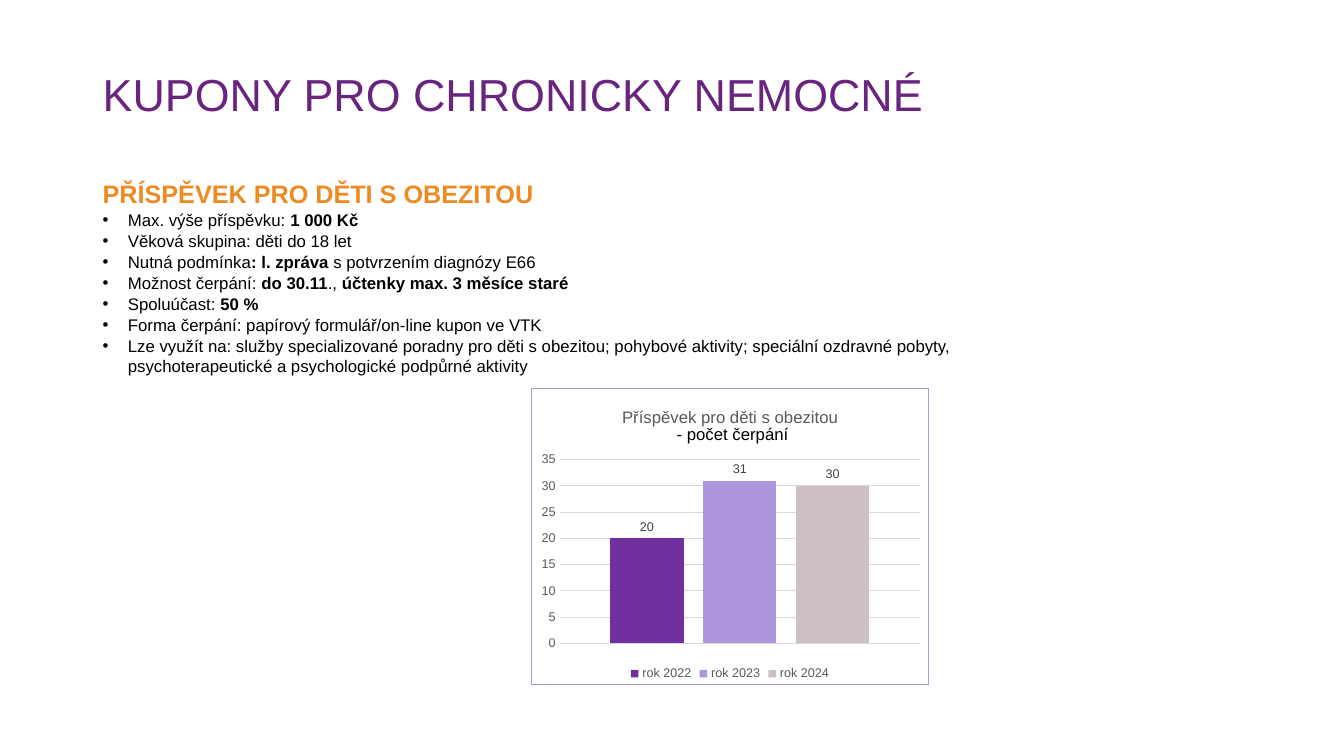
from dataclasses import dataclass
from typing import Optional

from lxml import etree
from pptx import Presentation
from pptx.chart.data import CategoryChartData
from pptx.dml.color import RGBColor as Rgb
from pptx.enum.chart import XL_CHART_TYPE as ChartType
from pptx.enum.chart import XL_LABEL_POSITION as LabelPos
from pptx.enum.chart import XL_LEGEND_POSITION as LegendPos
from pptx.enum.chart import XL_TICK_MARK as TickMark
from pptx.enum.text import MSO_ANCHOR as Anchor
from pptx.oxml import parse_xml
from pptx.oxml.ns import nsdecls, qn
from pptx.util import Inches, Pt


@dataclass(frozen=True)
class Theme:
    font: str = "Arial"
    purple: str = "692480"
    orange: str = "ED8B23"
    black: str = "000000"
    axis_grey: str = "595959"
    label_grey: str = "404040"
    grid: str = "D9D9D9"
    border: str = "AD96DC"
    white: str = "FFFFFF"
    title_size: int = 32
    heading_size: int = 18
    body_size: int = 12
    chart_size: int = 10
    small_size: int = 9


@dataclass(frozen=True)
class Run:
    text: str
    bold: bool = False


@dataclass(frozen=True)
class Year:
    name: str
    count: int
    color: str


THEME = Theme()

CONDITIONS = [
    [Run("Max. výše příspěvku: "), Run("1 000 Kč", True)],
    [Run("Věková skupina: děti do 18 let")],
    [Run("Nutná podmínka"), Run(": l. zpráva ", True), Run("s potvrzením diagnózy E66")],
    [Run("Možnost čerpání: "), Run("do 30.11", True), Run("., "),
     Run("účtenky max. 3 měsíce staré", True)],
    [Run("Spoluúčast: "), Run("50 %", True)],
    [Run("Forma čerpání: papírový formulář/on-line kupon ve VTK")],
    [Run("Lze využít na: služby specializované poradny pro děti s obezitou; "
         "pohybové aktivity; speciální ozdravné pobyty, "
         "psychoterapeutické a psychologické podpůrné aktivity")],
]

YEARS = [
    Year("rok 2022", 20, "7030A0"),
    Year("rok 2023", 31, "AD96DC"),
    Year("rok 2024", 30, "CDC1C4"),
]


def style_font(font, size: float, color: str, bold: bool = False) -> None:
    font.name = THEME.font
    font.size = Pt(size)
    font.bold = bold
    font.color.rgb = Rgb.from_string(color)


def add_frame(slide, left: float, top: float, width: float, height: float,
              anchor=Anchor.TOP):
    box = slide.shapes.add_textbox(Inches(left), Inches(top), Inches(width), Inches(height))
    frame = box.text_frame
    frame.word_wrap = True
    frame.vertical_anchor = anchor
    return frame


def write(paragraph, runs: list[Run], *, size: float, color: str,
          spacing: Optional[float] = None, bullet: bool = False) -> None:
    if spacing:
        paragraph.line_spacing = spacing
    if bullet:
        props = paragraph._p.get_or_add_pPr()
        props.set("marL", str(Inches(0.25)))
        props.set("indent", str(-Inches(0.25)))
        etree.SubElement(props, qn("a:buFont")).set("typeface", THEME.font)
        etree.SubElement(props, qn("a:buChar")).set("char", "•")
    for part in runs:
        run = paragraph.add_run()
        run.text = part.text
        style_font(run.font, size, color, part.bold)


def layout_xml(x: float, y: float, size: Optional[tuple[float, float]] = None):
    """Manual placement, as fractions of the chart area."""
    target = '<c:layoutTarget val="inner"/>' if size else ""
    extent = f'<c:w val="{size[0]}"/><c:h val="{size[1]}"/>' if size else ""
    return parse_xml(
        f'<c:layout {nsdecls("c")}><c:manualLayout>{target}'
        f'<c:xMode val="edge"/><c:yMode val="edge"/>'
        f'<c:x val="{x}"/><c:y val="{y}"/>{extent}</c:manualLayout></c:layout>')


def place(element, layout, after: Optional[str] = None) -> None:
    for old in element.findall(qn("c:layout")):
        element.remove(old)
    if after:
        element.find(qn(after)).addnext(layout)
    else:
        element.insert(0, layout)


def add_usage_chart(slide, years: list[Year]) -> None:
    usage = CategoryChartData(number_format="#,##0")
    usage.categories = ["1"]
    for year in years:
        usage.add_series(year.name, [year.count])
    chart = slide.shapes.add_chart(ChartType.COLUMN_CLUSTERED, Inches(5.27), Inches(3.85),
                                   Inches(3.94), Inches(2.95), usage).chart
    style_font(chart.font, THEME.chart_size, THEME.black)

    # Chart title
    heading = chart.chart_title.text_frame
    write(heading.paragraphs[0], [Run("Příspěvek pro děti s obezitou ")],
          size=THEME.body_size, color=THEME.axis_grey)
    write(heading.add_paragraph(), [Run("- počet čerpání")],
          size=THEME.body_size, color=THEME.black)
    chart.chart_title.include_in_layout = False
    place(chart.chart_title._element, layout_xml(0.22, 0.05), after="c:tx")
    place(chart._chartSpace.chart.plotArea, layout_xml(0.07, 0.24, (0.91, 0.62)))

    # Axes and legend
    chart.category_axis.visible = False
    counts = chart.value_axis
    counts.minimum_scale = 0
    counts.maximum_scale = 35
    counts.major_unit = 5
    counts.major_tick_mark = counts.minor_tick_mark = TickMark.NONE
    counts.format.line.fill.background()
    counts.major_gridlines.format.line.color.rgb = Rgb.from_string(THEME.grid)
    counts.major_gridlines.format.line.width = Pt(0.75)
    counts.tick_labels.number_format = "#,##0"
    counts.tick_labels.number_format_is_linked = False
    style_font(counts.tick_labels.font, THEME.small_size, THEME.axis_grey)
    chart.has_legend = True
    chart.legend.position = LegendPos.BOTTOM
    chart.legend.include_in_layout = False
    style_font(chart.legend.font, THEME.small_size, THEME.axis_grey)

    # Columns with their values
    columns = chart.plots[0]
    columns.gap_width = 139
    columns.overlap = -27
    columns.vary_by_categories = False
    for series, year in zip(columns.series, years):
        series.format.fill.solid()
        series.format.fill.fore_color.rgb = Rgb.from_string(year.color)
        labels = series.data_labels
        labels.show_value = True
        labels.position = LabelPos.OUTSIDE_END
        labels.number_format = "#,##0"
        labels.number_format_is_linked = False
        style_font(labels.font, THEME.small_size, THEME.label_grey)

    # Chart background and border
    chart._chartSpace.chart.addnext(parse_xml(
        f'<c:spPr {nsdecls("c", "a")}>'
        f'<a:solidFill><a:srgbClr val="{THEME.white}"/></a:solidFill>'
        f'<a:ln w="{Pt(0.75)}"><a:solidFill><a:srgbClr val="{THEME.border}"/></a:solidFill>'
        f'</a:ln></c:spPr>'))


def main() -> None:
    deck = Presentation()
    deck.slide_width, deck.slide_height = Inches(13.33), Inches(7.5)
    slide = deck.slides.add_slide(deck.slide_layouts[6])

    # Conditions of the allowance
    body = add_frame(slide, 0.92, 1.71, 8.94, 5.32)
    write(body.paragraphs[0], [Run("PŘÍSPĚVEK PRO DĚTI S OBEZITOU", True)],
          size=THEME.heading_size, color=THEME.orange, spacing=1.04)
    for condition in CONDITIONS:
        write(body.add_paragraph(), condition, size=THEME.body_size,
              color=THEME.black, spacing=1.04, bullet=True)

    # Slide title
    title = add_frame(slide, 0.92, 0.55, 9.81, 0.83, Anchor.MIDDLE)
    write(title.paragraphs[0], [Run("KUPONY PRO CHRONICKY NEMOCNÉ")],
          size=THEME.title_size, color=THEME.purple, spacing=0.9)

    # Usage by year
    add_usage_chart(slide, YEARS)
    deck.save("out.pptx")


if __name__ == "__main__":
    main()
